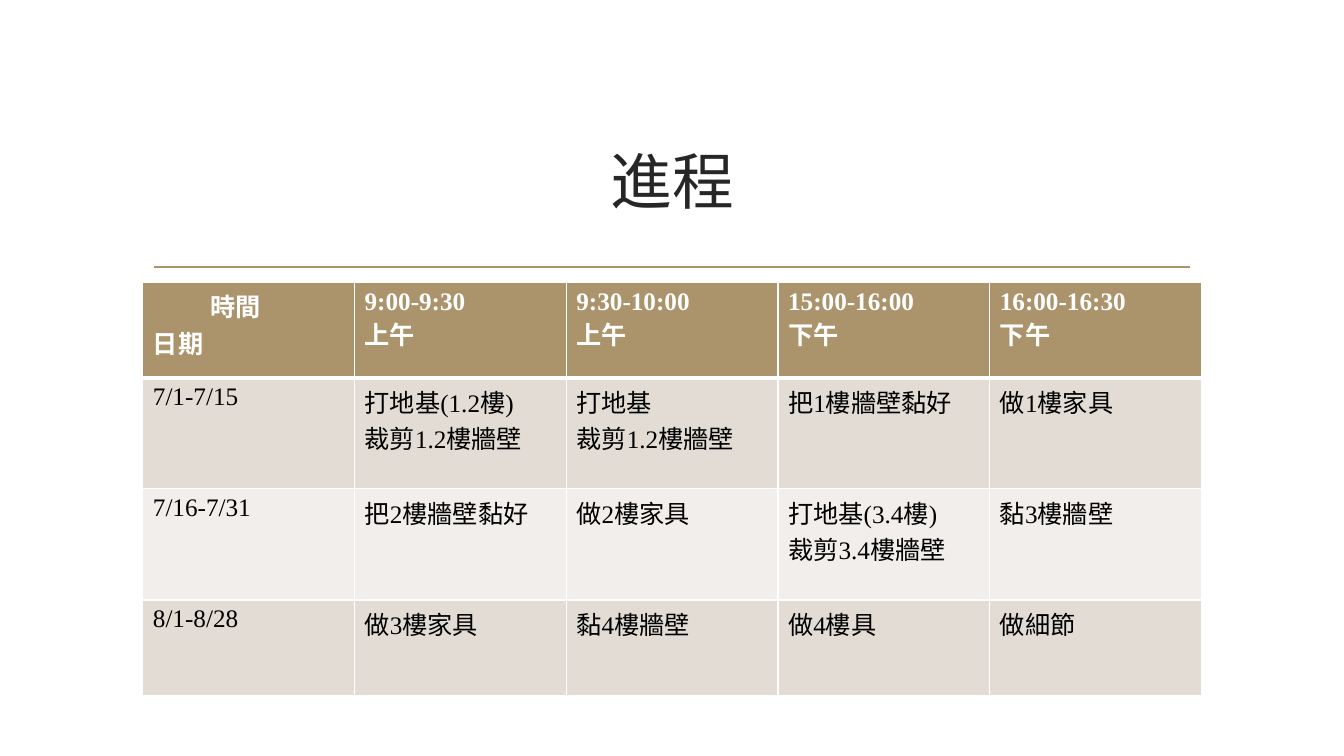
from lxml.etree import SubElement
from pptx import Presentation
from pptx.dml.color import RGBColor
from pptx.enum.shapes import MSO_CONNECTOR
from pptx.enum.text import MSO_ANCHOR, PP_ALIGN
from pptx.oxml.ns import qn
from pptx.util import Cm, Pt

SCHEDULE = [
    ["時間\n日期", "9:00-9:30\n上午", "9:30-10:00\n上午", "15:00-16:00\n下午", "16:00-16:30\n下午"],
    ["7/1-7/15", "打地基(1.2樓)\n裁剪1.2樓牆壁", "打地基\n裁剪1.2樓牆壁", "把1樓牆壁黏好", "做1樓家具"],
    ["7/16-7/31", "把2樓牆壁黏好", "做2樓家具", "打地基(3.4樓)\n裁剪3.4樓牆壁", "黏3樓牆壁"],
    ["8/1-8/28", "做3樓家具", "黏4樓牆壁", "做4樓具", "做細節"],
]
ROW_HEIGHTS = [2.4, 2.8, 2.8, 2.4]


def color(hex_text):
    return RGBColor.from_string(hex_text)


class SchedulePage:
    font = "Times New Roman"
    accent = "AB946B"
    title_color = "262626"
    white = "FFFFFF"
    black = "000000"
    bands = ["F1EEEB", "E2DCD4"]

    def __init__(self, page):
        self.page = page

    def fill_text(self, frame, text, size, text_color, bold=False, align=PP_ALIGN.LEFT):
        frame.text = text
        for para in frame.paragraphs:
            para.alignment = align
            for span in para.runs:
                span.font.name = self.font
                span.font.size = Pt(size)
                span.font.bold = bold
                span.font.color.rgb = color(text_color)

    def title(self, text, left, top, width, height):
        box = self.page.shapes.add_textbox(Cm(left), Cm(top), Cm(width), Cm(height))
        frame = box.text_frame
        frame.word_wrap = True
        frame.vertical_anchor = MSO_ANCHOR.MIDDLE
        self.fill_text(frame, text, 44, self.title_color, align=PP_ALIGN.CENTER)

    def rule(self, left, right, y):
        line = self.page.shapes.add_connector(
            MSO_CONNECTOR.STRAIGHT, Cm(left), Cm(y), Cm(right), Cm(y))
        line.line.color.rgb = color(self.accent)
        line.line.width = Pt(1.25)
        SubElement(line._element.spPr, qn("a:effectLst"))

    def border(self, cell, side, width):
        properties = cell._tc.get_or_add_tcPr()
        edge = SubElement(properties, qn(f"a:ln{side}"), w=str(Pt(width)))
        fill = SubElement(edge, qn("a:solidFill"))
        SubElement(fill, qn("a:srgbClr"), val=self.white)

    def table(self, rows, heights, left, top, width):
        table = self.page.shapes.add_table(
            len(rows), len(rows[0]), Cm(left), Cm(top), Cm(width), Cm(sum(heights))).table
        for column in table.columns:
            column.width = Cm(width / len(rows[0]))
        for row_index, (texts, height) in enumerate(zip(rows, heights)):
            table.rows[row_index].height = Cm(height)
            header = row_index == 0
            for column_index, text in enumerate(texts):
                cell = table.cell(row_index, column_index)
                self.fill_text(cell.text_frame, text, 18,
                               self.white if header else self.black, bold=header)
                for side in "LRTB":
                    thick = (header and side == "B") or (row_index == 1 and side == "T")
                    self.border(cell, side, 3 if thick else 1)
                cell.fill.solid()
                cell.fill.fore_color.rgb = color(
                    self.accent if header else self.bands[row_index % 2])
        return table

    def indent_first_line(self, cell, distance):
        properties = cell.text_frame.paragraphs[0]._p.get_or_add_pPr()
        properties.set("marL", str(Cm(distance)))


def main():
    deck = Presentation()
    deck.slide_width = Cm(33.87)
    deck.slide_height = Cm(19.05)
    schedule = SchedulePage(deck.slides.add_slide(deck.slide_layouts[6]))
    schedule.rule(3.89, 30, 6.73)
    schedule.title("進程", 3.6, 2.72, 26.68, 3.63)
    table = schedule.table(SCHEDULE, ROW_HEIGHTS, 3.6, 7.12, 26.68)
    schedule.indent_first_line(table.cell(0, 0), 1.44)
    deck.save("out.pptx")


if __name__ == "__main__":
    main()
